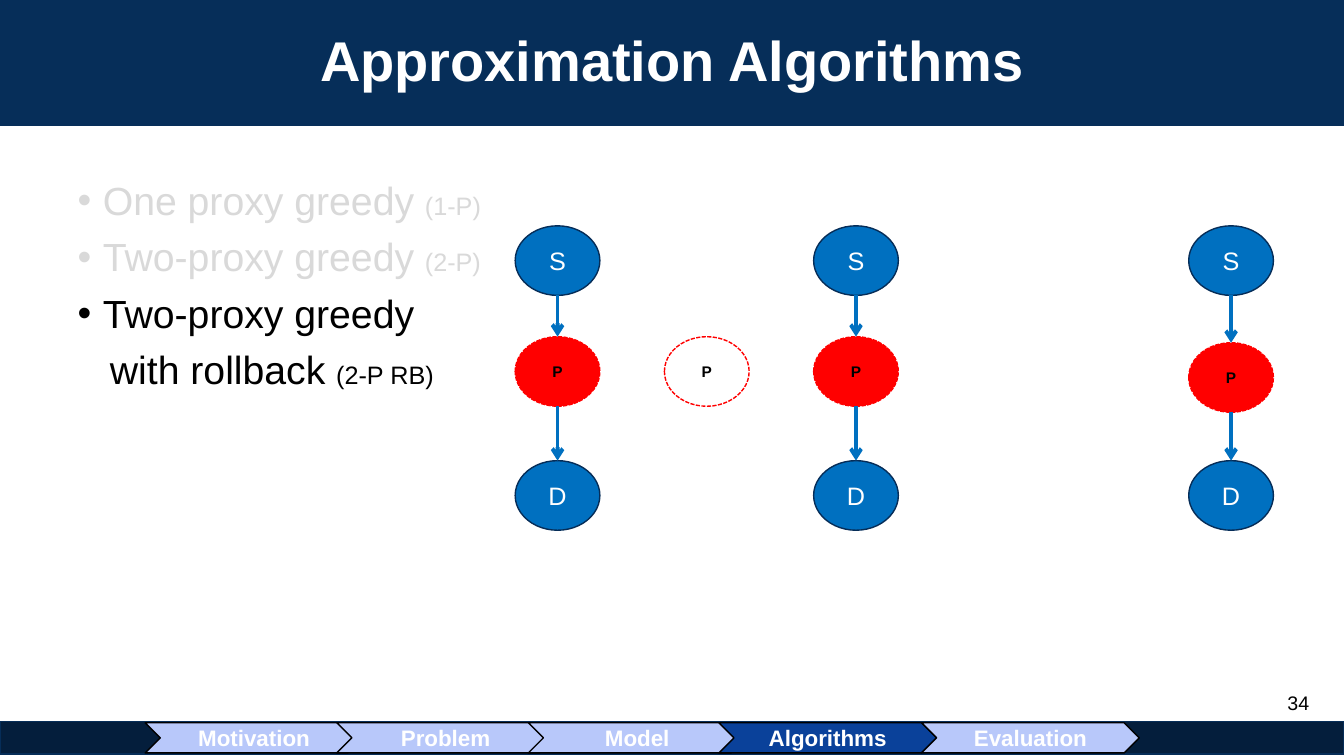
from dataclasses import dataclass

from lxml.etree import SubElement
from pptx import Presentation
from pptx.dml.color import RGBColor
from pptx.enum.dml import MSO_LINE
from pptx.enum.shapes import MSO_CONNECTOR, MSO_SHAPE
from pptx.enum.text import MSO_ANCHOR, MSO_AUTO_SIZE, PP_ALIGN
from pptx.oxml.ns import qn
from pptx.util import Inches, Pt


@dataclass(frozen=True)
class Theme:
    font: str = "Arial"
    white: str = "FFFFFF"
    black: str = "000000"
    muted: str = "D9D9D9"
    title_bar: str = "062E59"
    outline: str = "062D58"
    node: str = "0070C0"
    proxy: str = "FF0000"
    nav_bar: str = "041E3C"
    step: str = "B8C8FA"
    current_step: str = "0A419A"
    title_size: int = 40
    body_size: int = 28
    node_size: int = 18
    step_size: int = 16
    number_size: int = 14
    proxy_size: int = 11


T = Theme()
NODE_W, NODE_H = 0.84, 0.69
SOURCE_Y, DEST_Y = 2.24, 4.57


def rgb(value):
    return RGBColor.from_string(value)


def place(s, x, y, w, h):
    s.left, s.top, s.width, s.height = (Inches(v) for v in (x, y, w, h))


def add_run(p, text, size, color, bold=False):
    r = p.add_run()
    r.text = text
    r.font.name, r.font.size, r.font.bold = T.font, Pt(size), bold
    r.font.color.rgb = rgb(color)


def add_box(slide, kind, x, y, w, h, fill, line):
    s = slide.shapes.add_shape(kind, Inches(x), Inches(y), Inches(w), Inches(h))
    s.shadow.inherit = False
    s.fill.solid()
    s.fill.fore_color.rgb = rgb(fill)
    s.line.color.rgb = rgb(line)
    s.line.width = Pt(1)
    return s


def add_label(s, text, size, color, bold=False):
    tf = s.text_frame
    tf.margin_left = tf.margin_right = tf.margin_top = tf.margin_bottom = 0
    tf.vertical_anchor = MSO_ANCHOR.MIDDLE
    p = tf.paragraphs[0]
    p.alignment = PP_ALIGN.CENTER
    add_run(p, text, size, color, bold)


def add_node(slide, text, x, y):
    s = add_box(slide, MSO_SHAPE.OVAL, x, y, NODE_W, NODE_H, T.node, T.outline)
    add_label(s, text, T.node_size, T.white)


def add_proxy(slide, x, y, fill):
    s = add_box(slide, MSO_SHAPE.OVAL, x, y, NODE_W, NODE_H, fill, T.proxy)
    s.line.dash_style = MSO_LINE.SQUARE_DOT
    add_label(s, "P", T.proxy_size, T.black, bold=True)


def add_arrow(slide, x, y1, y2):
    c = slide.shapes.add_connector(
        MSO_CONNECTOR.STRAIGHT, Inches(x), Inches(y1), Inches(x), Inches(y2))
    c.line.color.rgb = rgb(T.node)
    c.line.width = Pt(2.75)
    SubElement(c.line._get_or_add_ln(), qn("a:tailEnd"), type="arrow")
    SubElement(c._element.spPr, qn("a:effectLst"))


def add_route(slide, x, proxy_y):
    """Source, proxy and destination in one column, joined by arrows."""
    add_node(slide, "S", x, SOURCE_Y)
    add_proxy(slide, x, proxy_y, T.proxy)
    add_node(slide, "D", x, DEST_Y)
    center = x + NODE_W / 2
    add_arrow(slide, center, SOURCE_Y + NODE_H, proxy_y)
    add_arrow(slide, center, proxy_y + NODE_H, DEST_Y)


def fill_title(s, text):
    place(s, 0, 0, 13.33, 1.25)
    s.fill.solid()
    s.fill.fore_color.rgb = rgb(T.title_bar)
    tf = s.text_frame
    tf.auto_size = MSO_AUTO_SIZE.NONE
    tf.vertical_anchor = MSO_ANCHOR.MIDDLE
    p = tf.paragraphs[0]
    p.alignment = PP_ALIGN.CENTER
    p.line_spacing = 0.9
    add_run(p, text, T.title_size, T.white, bold=True)


def fill_list(s, items):
    place(s, 0.67, 1.75, 12, 4.95)
    tf = s.text_frame
    tf.auto_size = MSO_AUTO_SIZE.NONE
    for i, (text, short, color, bullet) in enumerate(items):
        p = tf.paragraphs[0] if i == 0 else tf.add_paragraph()
        p.line_spacing, p.space_before = 0.9, Pt(10)
        pPr = p._p.get_or_add_pPr()
        pPr.set("marL", str(Inches(0.25 if bullet else 0.32)))
        pPr.set("indent", str(Inches(-0.25 if bullet else 0)))
        if bullet:
            SubElement(pPr, qn("a:buFont"), typeface=T.font)
            SubElement(pPr, qn("a:buChar"), char="•")
        else:
            SubElement(pPr, qn("a:buNone"))
        add_run(p, text, T.body_size, color)
        if short:
            add_run(p, short, T.node_size, color)


def add_number(slide, text):
    s = slide.shapes.add_textbox(
        Inches(12.67), Inches(6.81), Inches(0.67), Inches(0.52))
    s.text_frame.word_wrap = True
    p = s.text_frame.paragraphs[0]
    p.alignment = PP_ALIGN.LEFT
    add_run(p, text, T.number_size, T.black)


def add_navigation(slide, steps, current):
    add_box(slide, MSO_SHAPE.RECTANGLE, 0, 7.16, 13.33, 0.32, T.nav_bar, T.outline)
    for text, x in steps:
        fill = T.current_step if text == current else T.step
        s = add_box(slide, MSO_SHAPE.CHEVRON, x, 7.17, 2.16, 0.3, fill, T.black)
        add_label(s, text, T.step_size, T.white, bold=True)


def main():
    prs = Presentation()
    prs.slide_width, prs.slide_height = Inches(13.33), Inches(7.5)
    slide = prs.slides.add_slide(prs.slide_layouts[1])

    # Title, list and slide number
    fill_title(slide.shapes.title, "Approximation Algorithms")
    fill_list(slide.placeholders[1], [
        ("One proxy greedy ", "(1-P)", T.muted, True),
        ("Two-proxy greedy ", "(2-P)", T.muted, True),
        ("Two-proxy greedy", "", T.black, True),
        ("with rollback ", "(2-P RB)", T.black, False),
    ])
    add_number(slide, "34")

    # Routes from source to destination, and the unused proxy
    for x, proxy_y in [(5.11, 3.34), (8.07, 3.34), (11.79, 3.4)]:
        add_route(slide, x, proxy_y)
    add_proxy(slide, 6.59, 3.34, T.white)

    # Progress bar
    add_navigation(slide, [
        ("Motivation", 1.44), ("Problem", 3.34), ("Model", 5.24),
        ("Algorithms", 7.13), ("Evaluation", 9.14),
    ], current="Algorithms")

    prs.save("out.pptx")


if __name__ == "__main__":
    main()
